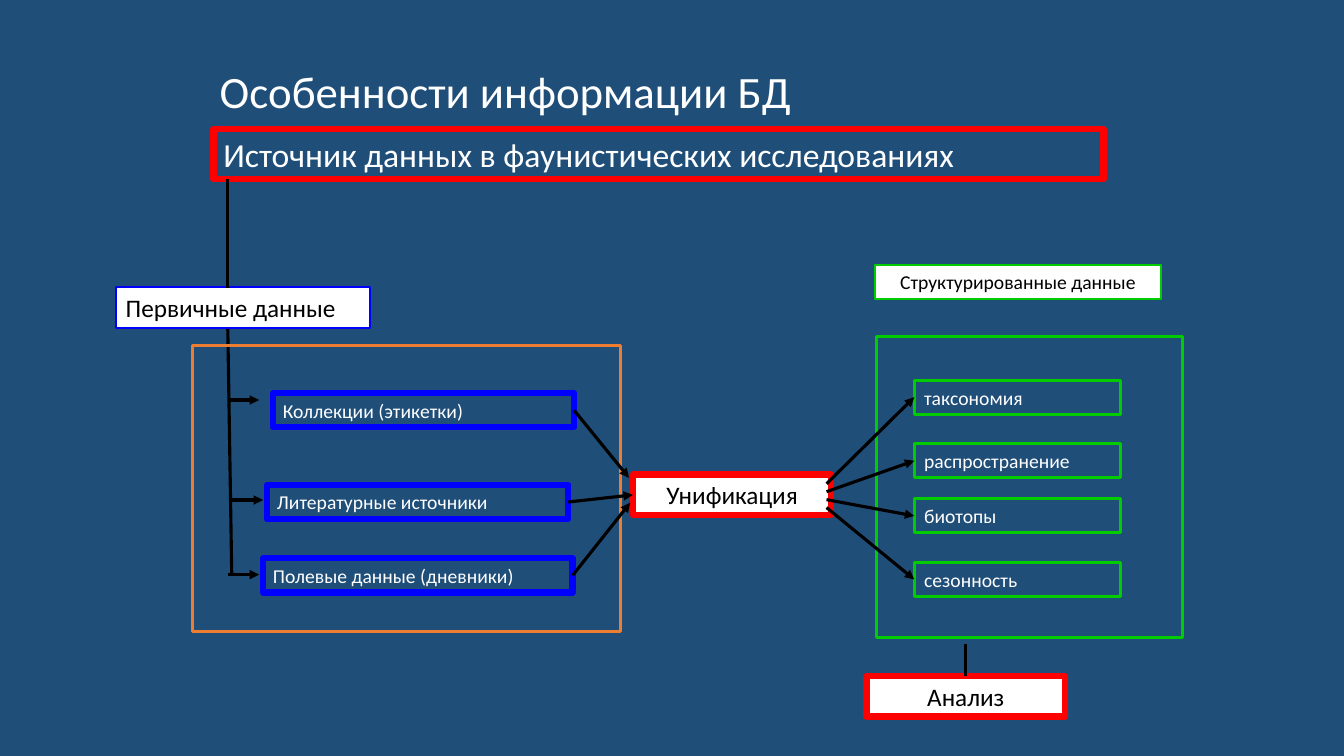
from lxml.etree import SubElement
from pptx import Presentation
from pptx.dml.color import RGBColor
from pptx.enum.shapes import MSO_CONNECTOR, MSO_SHAPE
from pptx.enum.text import MSO_ANCHOR, MSO_AUTO_SIZE, PP_ALIGN
from pptx.oxml.ns import qn
from pptx.util import Cm, Pt

FONT = "Calibri"
NAVY, WHITE, BLACK = "1F4E79", "FFFFFF", "000000"
RED, BLUE, GREEN, ORANGE = "FF0000", "0000FF", "00CC00", "ED7D31"
LEFT_SIDE, RIGHT_SIDE, TOP_SIDE = 1, 3, 0


def rgb(color):
    return RGBColor.from_string(color)


def style_text(frame, text, size, color, align):
    frame.text = text
    paragraph = frame.paragraphs[0]
    paragraph.alignment = align
    paragraph.font.name = FONT
    paragraph.font.size = Pt(size)
    paragraph.font.color.rgb = rgb(color)
    return paragraph


def add_title(slide, text):
    title = slide.shapes.title
    title.left, title.top = Cm(5.28), Cm(1.17)
    title.width, title.height = Cm(22.86), Cm(2.41)
    title.text_frame.auto_size = MSO_AUTO_SIZE.NONE
    title.text_frame.vertical_anchor = MSO_ANCHOR.MIDDLE
    paragraph = style_text(title.text_frame, text, 32, WHITE, PP_ALIGN.LEFT)
    paragraph.line_spacing = 0.9


def add_frame(slide, left, top, width, height, line, weight=2.25, fill=None):
    frame = slide.shapes.add_shape(
        MSO_SHAPE.RECTANGLE, Cm(left), Cm(top), Cm(width), Cm(height))
    frame.shadow.inherit = False
    frame.line.color.rgb = rgb(line)
    frame.line.width = Pt(weight)
    if fill:
        frame.fill.solid()
        frame.fill.fore_color.rgb = rgb(fill)
    else:
        frame.fill.background()
    return frame


def add_box(slide, text, left, top, width, height, line, weight, size=14,
            fill=None, align=PP_ALIGN.LEFT):
    """Add a framed label: black text on a fill, white text without one."""
    box = add_frame(slide, left, top, width, height, line, weight, fill)
    box.text_frame.word_wrap = True
    box.text_frame.auto_size = MSO_AUTO_SIZE.SHAPE_TO_FIT_TEXT
    style_text(box.text_frame, text, size, BLACK if fill else WHITE, align)
    return box


def add_line(slide, start, end, arrow=False):
    line = slide.shapes.add_connector(
        MSO_CONNECTOR.STRAIGHT, *(Cm(value) for value in (*start, *end)))
    line.line.color.rgb = rgb(BLACK)
    line.line.width = Pt(2.25)
    if arrow:
        SubElement(line.line._get_or_add_ln(), qn("a:tailEnd"), type="triangle")
    SubElement(line._element.spPr, qn("a:effectLst"))
    return line


def add_primary_data(slide):
    add_line(slide, (5.74, 8.26), (5.84, 14.48))
    for x, y in ((5.74, 10.08), (5.84, 12.6), (5.74, 14.48)):
        add_line(slide, (x, y), (x + 0.79, y), arrow=True)
    add_frame(slide, 4.85, 8.71, 10.8, 7.21, ORANGE)
    add_box(slide, "Первичные данные", 2.92, 7.24, 6.4, 1.02, BLUE, 1.5,
            size=18, fill=WHITE)
    add_line(slide, (5.74, 4.52), (5.74, 7.26))


def add_sources(slide, unification):
    """Add the three source boxes and their arrows into unification."""
    sources = (
        ("Коллекции (этикетки)", 6.88, 9.91, 7.59, (15.85, 12.04)),
        ("Литературные источники", 6.73, 12.22, 7.59, (15.85, 12.42)),
        ("Полевые данные (дневники)", 6.63, 14.07, 7.8, (15.88, 12.67)),
    )
    for text, left, top, width, target in sources:
        source = add_box(slide, text, left, top, width, 0.86, BLUE, 4.5)
        arrow = add_line(slide, (left + width, top + 0.43), target, arrow=True)
        arrow.begin_connect(source, RIGHT_SIDE)
        if text == "Литературные источники":
            arrow.end_connect(unification, LEFT_SIDE)


def add_structured_data(slide):
    left = 23.04
    add_frame(slide, 22.1, 8.48, 7.7, 7.59, GREEN)
    add_box(slide, "Структурированные данные", 22.05, 6.68, 7.21, 0.86,
            GREEN, 1.5, fill=WHITE, align=PP_ALIGN.CENTER)
    fields = (("таксономия", 9.58), ("распространение", 11.18),
              ("биотопы", 12.57), ("сезонность", 14.17))
    for index, (text, top) in enumerate(fields):
        field = add_box(slide, text, left, top, 5.21, 0.86, GREEN, 2.25)
        arrow = add_line(slide, (20.83, 12.19 + 0.2 * index),
                         (left, top + 0.43), arrow=True)
        arrow.end_connect(field, LEFT_SIDE)


def add_stage(slide, text, left, top):
    return add_box(slide, text, left, top, 5, 1.02, RED, 4.5, size=18,
                   fill=WHITE, align=PP_ALIGN.CENTER)


def main():
    deck = Presentation()
    deck.slide_width, deck.slide_height = Cm(33.87), Cm(19.05)
    slide = deck.slides.add_slide(deck.slide_layouts[5])
    slide.background.fill.solid()
    slide.background.fill.fore_color.rgb = rgb(NAVY)

    add_title(slide, "Особенности информации БД")
    add_box(slide, "Источник данных в фаунистических исследованиях",
            5.38, 3.25, 22.43, 1.27, RED, 4.5, size=24)
    add_primary_data(slide)
    unification = add_stage(slide, "Унификация", 15.95, 11.96)
    add_sources(slide, unification)
    add_structured_data(slide)
    analysis = add_stage(slide, "Анализ", 21.84, 17.04)
    stem = add_line(slide, (24.34, 16.23), (24.34, 17.04))
    stem.end_connect(analysis, TOP_SIDE)

    deck.save("out.pptx")


if __name__ == "__main__":
    main()
